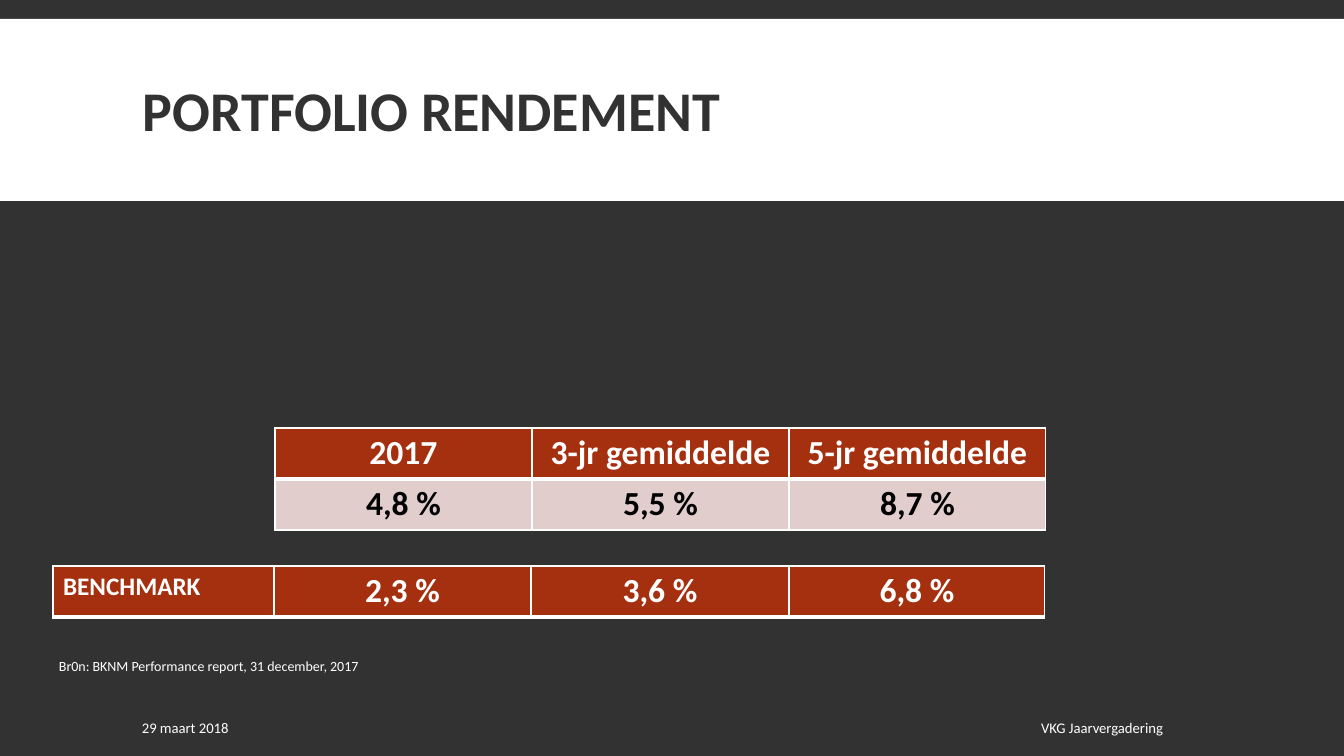
from lxml.etree import SubElement
from pptx import Presentation
from pptx.dml.color import RGBColor
from pptx.enum.shapes import MSO_SHAPE
from pptx.enum.text import MSO_ANCHOR, PP_ALIGN
from pptx.oxml.ns import qn
from pptx.util import Pt

SCALE = 914400 / 100.8
COLORS = {"dark": "323232", "white": "FFFFFF", "black": "000000",
          "red": "A5300F", "pink": "E1CDCC"}


def px(size):
    return round(size * SCALE)


def color(name):
    return RGBColor.from_string(COLORS[name])


def assign(target, values):
    for key, value in values.items():
        setattr(target, key, value)


class Deck:
    font = "Calibri"

    def __init__(self, wide, high):
        self.show = Presentation()
        assign(self.show, {"slide_width": px(wide), "slide_height": px(high)})
        self.slide = self.show.slides.add_slide(self.show.slide_layouts[6])
        self.paint(self.slide.background, "dark")

    def paint(self, target, name):
        target.fill.solid()
        target.fill.fore_color.rgb = color(name)

    def letter(self, frame, text, size, ink, bold=False, align=PP_ALIGN.LEFT):
        line = frame.paragraphs[0]
        line.alignment = align
        run = line.add_run()
        run.text = text
        assign(run.font, {"name": self.font, "size": Pt(size), "bold": bold})
        run.font.color.rgb = color(ink)
        return line

    def band(self, box, name):
        shape = self.slide.shapes.add_shape(MSO_SHAPE.RECTANGLE, *map(px, box))
        shape.shadow.inherit = False
        self.paint(shape, name)
        shape.line.fill.background()

    def label(self, box, text, size, ink="white", wrap=True,
              anchor=MSO_ANCHOR.MIDDLE, **style):
        frame = self.slide.shapes.add_textbox(*map(px, box)).text_frame
        assign(frame, {"word_wrap": wrap, "vertical_anchor": anchor})
        return self.letter(frame, text, size, ink, **style)

    def border(self, cell, widths):
        props = cell._tc.get_or_add_tcPr()
        for side, width in widths.items():
            line = SubElement(props, qn(f"a:ln{side}"), w=str(Pt(width)))
            fill = SubElement(line, qn("a:solidFill"))
            SubElement(fill, qn("a:srgbClr"), val=COLORS["white"])

    def table(self, left, top, widths, high, rows):
        shape = self.slide.shapes.add_table(
            len(rows), len(widths), px(left), px(top),
            px(sum(widths)), px(high * len(rows)))
        grid = shape.table
        assign(grid, {"first_row": False, "horz_banding": False})
        for column, width in zip(grid.columns, widths):
            column.width = px(width)
        for r, (fill, ink, upper, lower, items) in enumerate(rows):
            grid.rows[r].height = px(high)
            for c, (text, size, align) in enumerate(items):
                cell = grid.cell(r, c)
                self.border(cell, {"L": 1, "R": 1, "T": upper, "B": lower})
                self.paint(cell, fill)
                self.letter(cell.text_frame, text, size, ink, True, align)

    def save(self):
        self.show.save("out.pptx")


def values(*texts):
    return [(text, 24, PP_ALIGN.CENTER) for text in texts]


def main():
    deck = Deck(1344, 756)
    deck.band((0, 19, 1344, 182), "white")
    title = deck.label((133, 31, 1079, 166), "PORTFOLIO RENDEMENT", 40,
                       "dark", bold=True)
    title.line_spacing = 0.85
    deck.table(275, 428, [257] * 3, 51, [
        ("red", "white", 1, 3,
         values("2017", "3-jr gemiddelde", "5-jr gemiddelde")),
        ("pink", "black", 3, 1, values("4,8 %", "5,5 %", "8,7 %")),
    ])
    deck.table(53, 566, [221, 257, 258, 256], 51, [
        ("red", "white", 1, 3,
         [("BENCHMARK", 18, PP_ALIGN.LEFT)]
         + values("2,3 %", "3,6 %", "6,8 %")),
    ])
    deck.label((617, 708, 556, 40), "VKG Jaarvergadering", 10.5,
               align=PP_ALIGN.RIGHT)
    deck.label((132, 708, 331, 40), "29 maart 2018", 10.5)
    deck.label((49, 653, 330, 27),
               "Br0n: BKNM Performance report, 31 december, 2017", 10,
               wrap=False, anchor=MSO_ANCHOR.TOP)
    deck.save()


if __name__ == "__main__":
    main()
